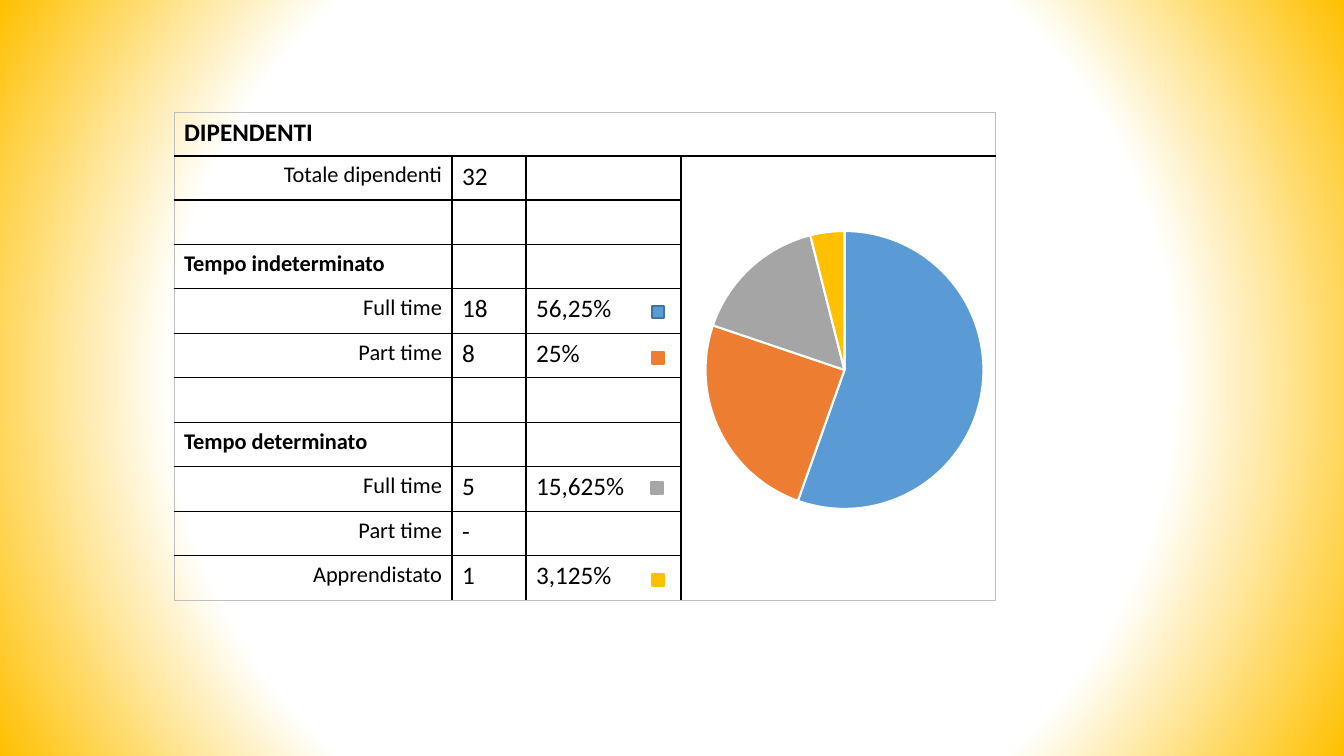
from lxml import etree
from pptx import Presentation
from pptx import util as u
from pptx.chart import data as cd
from pptx.dml import color
from pptx.enum import chart as ch, shapes, text
from pptx.oxml import ns, parse_xml

FONT = "Calibri"
BLACK, GREY = "000000", "BFBFBF"
BLUE, ORANGE, SILVER, GOLD = "5B9BD5", "ED7D31", "A5A5A5", "FFC000"

LEFT, TOP, HIGH = 174, 112, 489
COLS = [278, 74, 155, 315]
HEAD = "DIPENDENTI"
# Label, count, share; a row without a count is a group heading
ROWS = [
    ("Totale dipendenti", "32", ""),
    ("", "", ""),
    ("Tempo indeterminato", "", ""),
    ("Full time", "18", "56,25%"),
    ("Part time", "8", "25%"),
    ("", "", ""),
    ("Tempo determinato", "", ""),
    ("Full time", "5", "15,625%"),
    ("Part time", "-", ""),
    ("Apprendistato", "1", "3,125%"),
]
SLICES = [(56, BLUE), (25, ORANGE), (16, SILVER), (4, GOLD)]
# Left, top, fill, line
KEYS = [
    (652, 306, BLUE, "43739E"),
    (652, 352, ORANGE, ORANGE),
    (651, 482, "A6A6A6", "A6A6A6"),
    (652, 574, GOLD, GOLD),
]
PLAIN = "{2D5ABB26-0587-4C30-8999-92F81FD0307C}"


def px(n):
    return u.Emu(round(n * 914400 / 100.8))


def rgb(code):
    return color.RGBColor.from_string(code)


def paint_back(slide):
    slide.background.fill.gradient()
    old = slide.element.find(".//" + ns.qn("a:gradFill"))
    new = parse_xml(
        f'<a:gradFill {ns.nsdecls("a")} rotWithShape="1"><a:gsLst>'
        '<a:gs pos="0"><a:srgbClr val="FFFFFF"/></a:gs>'
        '<a:gs pos="65000"><a:srgbClr val="FFFFFF"/></a:gs>'
        f'<a:gs pos="100000"><a:srgbClr val="{GOLD}">'
        '<a:alpha val="68000"/></a:srgbClr></a:gs></a:gsLst>'
        '<a:path path="circle"><a:fillToRect l="50000" t="50000" '
        'r="50000" b="50000"/></a:path></a:gradFill>')
    old.getparent().replace(old, new)


def write(cell, words, size, bold=False, right=False):
    if not words:
        return
    para = cell.text_frame.paragraphs[0]
    para.alignment = text.PP_ALIGN.RIGHT if right else text.PP_ALIGN.LEFT
    run = para.add_run()
    run.text = words
    run.font.name, run.font.size, run.font.bold = FONT, u.Pt(size), bold
    run.font.color.rgb = rgb(BLACK)


def rule(cell, side, code):
    line = etree.SubElement(cell._tc.get_or_add_tcPr(), ns.qn("a:ln" + side))
    line.set("w", str(u.Pt(1 if code == BLACK else 0.75)))
    fill = etree.SubElement(line, ns.qn("a:solidFill"))
    etree.SubElement(fill, ns.qn("a:srgbClr")).set("val", code)


def frame(cell, row, col):
    end, low = col + cell.span_width, row + cell.span_height
    head, side = row == 0, col == len(COLS) - 1
    # Side, on the outer edge, inside a merged area
    for name, outer, inner in [
        ("L", col == 0, head),
        ("R", end == len(COLS), head),
        ("T", head, side and row > 1),
        ("B", low == len(ROWS) + 1, side and not head),
    ]:
        if outer or not inner:
            rule(cell, name, GREY if outer else BLACK)


def add_grid(slide):
    count = len(ROWS) + 1
    table = slide.shapes.add_table(
        count, len(COLS), px(LEFT), px(TOP), px(sum(COLS)), px(HIGH)).table
    table.first_row = table.horz_banding = False
    table._tbl.tblPr.find(ns.qn("a:tableStyleId")).text = PLAIN
    for col, wide in zip(table.columns, COLS):
        col.width = px(wide)
    for i, row in enumerate(table.rows):
        row.height = px(HIGH * (i + 1) // count - HIGH * i // count)
    table.cell(0, 0).merge(table.cell(0, 3))
    table.cell(1, 3).merge(table.cell(count - 1, 3))

    write(table.cell(0, 0), HEAD, 18, bold=True)
    for i, (label, total, share) in enumerate(ROWS, 1):
        write(table.cell(i, 0), label, 16, bold=not total, right=bool(total))
        write(table.cell(i, 1), total, 18)
        write(table.cell(i, 2), share, 18)
    for i in range(count):
        for j in range(len(COLS)):
            cell = table.cell(i, j)
            frame(cell, i, j)
            cell.fill.background()


def add_pie(slide):
    data = cd.CategoryChartData()
    data.categories = [str(i + 1) for i in range(len(SLICES))]
    data.add_series("Series 1", [value for value, _ in SLICES])
    pie = slide.shapes.add_chart(
        ch.XL_CHART_TYPE.PIE, px(690), px(177), px(306), px(386), data).chart
    pie.has_legend = pie.has_title = False
    pie.font.name, pie.font.size = FONT, u.Pt(10)
    pie.font.color.rgb = rgb(BLACK)
    plot = pie.plots[0]
    plot.vary_by_categories = True
    for i, (_, code) in enumerate(SLICES):
        form = plot.series[0].points[i].format
        form.fill.solid()
        form.fill.fore_color.rgb = rgb(code)
        form.line.color.rgb = rgb("FFFFFF")
        form.line.width = u.Pt(1.5)
    # Fixed plot area
    area = pie._chartSpace.find(".//" + ns.qn("c:plotArea"))
    for old in area.findall(ns.qn("c:layout")):
        area.remove(old)
    layout = etree.Element(ns.qn("c:layout"))
    area.insert(0, layout)
    spot = etree.SubElement(layout, ns.qn("c:manualLayout"))
    for tag, val in [("layoutTarget", "inner"), ("xMode", "edge"),
                     ("yMode", "edge"), ("x", "0.05"), ("y", "0.14"),
                     ("w", "0.91"), ("h", "0.72")]:
        etree.SubElement(spot, ns.qn("c:" + tag)).set("val", val)


def add_key(slide, left, top, fill, line):
    box = slide.shapes.add_shape(
        shapes.MSO_SHAPE.RECTANGLE, px(left), px(top), px(12), px(12))
    box.shadow.inherit = False
    box.fill.solid()
    box.fill.fore_color.rgb = rgb(fill)
    box.line.color.rgb = rgb(line)
    box.line.width = u.Pt(1)


def main():
    deck = Presentation()
    deck.slide_width, deck.slide_height = px(1344), px(756)
    slide = deck.slides.add_slide(deck.slide_layouts[6])
    paint_back(slide)
    add_grid(slide)
    add_pie(slide)
    for key in KEYS:
        add_key(slide, *key)
    deck.save("out.pptx")


if __name__ == "__main__":
    main()
